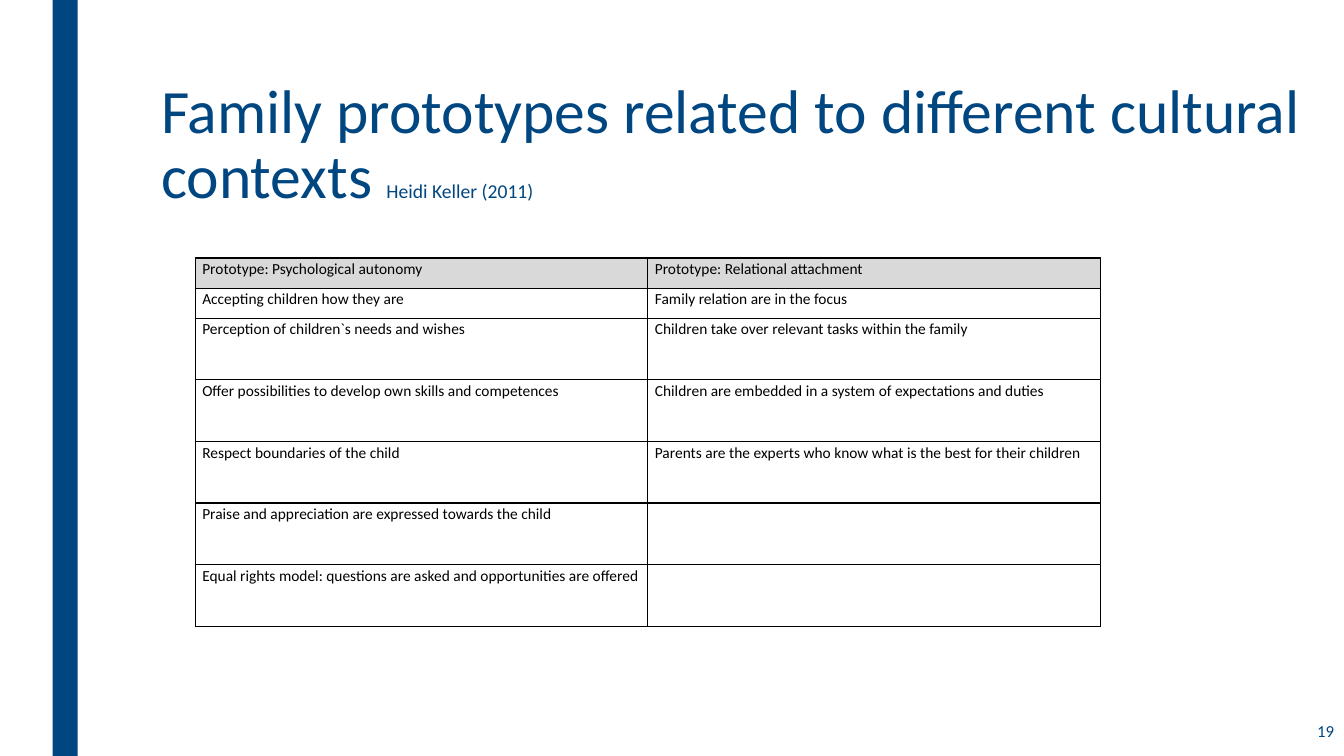
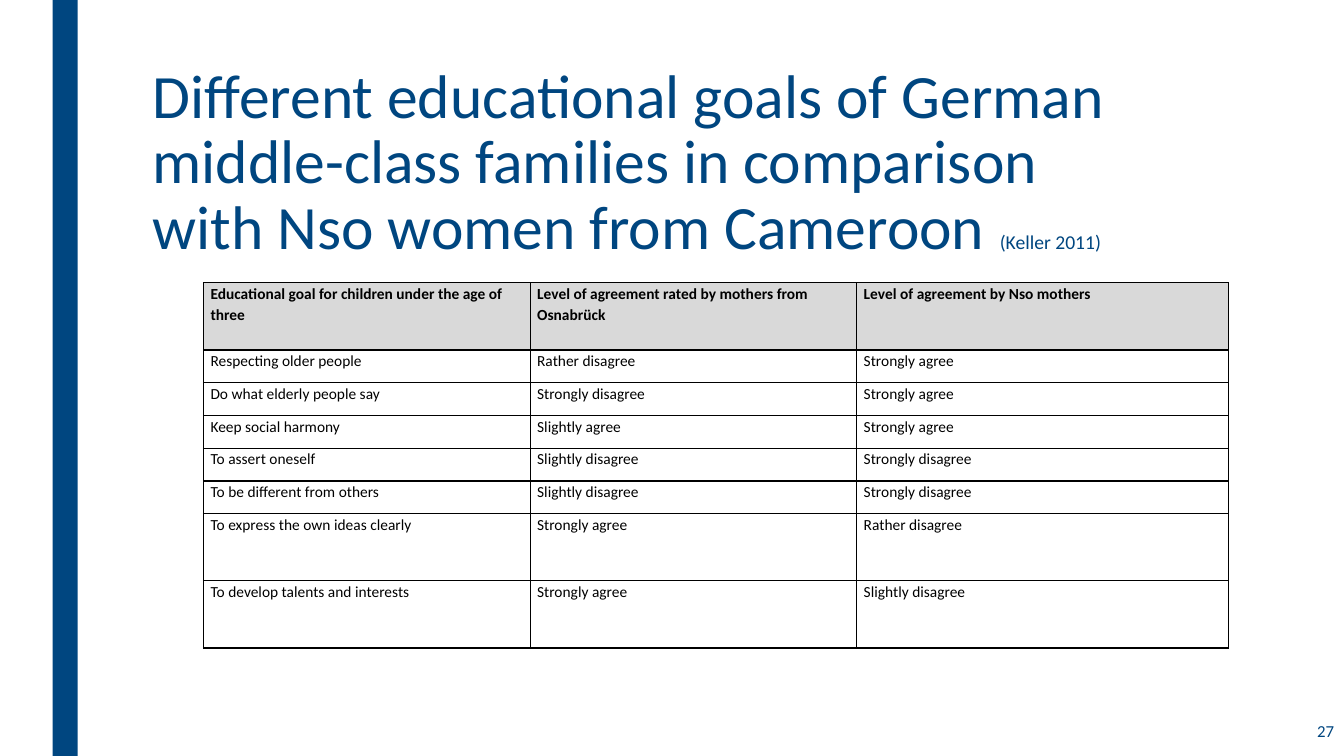
from lxml import etree
from pptx import Presentation
from pptx.dml.color import RGBColor
from pptx.enum.shapes import MSO_SHAPE
from pptx.enum.text import MSO_ANCHOR, PP_ALIGN
from pptx.oxml import parse_xml
from pptx.oxml.ns import nsdecls
from pptx.util import Pt

RECTANGLE = MSO_SHAPE.RECTANGLE
TOP, MIDDLE = MSO_ANCHOR.TOP, MSO_ANCHOR.MIDDLE
LEFT, RIGHT = PP_ALIGN.LEFT, PP_ALIGN.RIGHT


class Deck:
    """Holds the shared style and the current slide."""

    COLORS = {"blue": "004680", "black": "000000", "header": "D9D9D9"}
    FONT = "Calibri"

    def __init__(self):
        self.presentation = Presentation()
        self.presentation.slide_width = Pt(960)
        self.presentation.slide_height = Pt(540)
        self.slide = None

    def color(self, name):
        return RGBColor.from_string(self.COLORS[name])

    def new_slide(self, number):
        self.slide = self.presentation.slides.add_slide(self.presentation.slide_layouts[6])
        self.band()
        self.text(834, 506, 126, 32, [(str(number), 12)], anchor=MIDDLE, align=RIGHT)

    def band(self):
        band = self.slide.shapes.add_shape(RECTANGLE, Pt(37.5), 0, Pt(18), Pt(540))
        band.shadow.inherit = False
        band.fill.solid()
        band.fill.fore_color.rgb = self.color("blue")
        band.line.fill.background()

    def run(self, paragraph, words, size, color, bold=False):
        run = paragraph.add_run()
        run.text = words
        run.font.name = self.FONT
        run.font.size = Pt(size)
        run.font.bold = bold
        run.font.color.rgb = self.color(color)

    def text(self, left, top, width, height, runs, anchor=TOP, align=LEFT, spacing=1.0):
        frame = self.slide.shapes.add_textbox(Pt(left), Pt(top), Pt(width), Pt(height)).text_frame
        frame.word_wrap = True
        frame.vertical_anchor = anchor
        paragraph = frame.paragraphs[0]
        paragraph.alignment = align
        paragraph.line_spacing = spacing
        for words, size in runs:
            self.run(paragraph, words, size, "blue")

    def title(self, left, top, width, height, heading, citation):
        self.text(left, top, width, height, [(heading, 44), (citation, 14)], spacing=0.89)

    def borders(self, cell):
        properties = cell._tc.get_or_add_tcPr()
        for side in ("lnL", "lnR", "lnT", "lnB"):
            line = parse_xml(f'<a:{side} {nsdecls("a")} w="{Pt(1)}"/>')
            fill = etree.SubElement(line, line.tag.replace(side, "solidFill"))
            etree.SubElement(fill, line.tag.replace(side, "srgbClr"), val=self.COLORS["black"])
            properties.append(line)

    def cell(self, cell, words, header, bold):
        cell.margin_left = cell.margin_right = Pt(5)
        cell.margin_top = cell.margin_bottom = 0
        self.borders(cell)
        if header:
            cell.fill.solid()
            cell.fill.fore_color.rgb = self.color("header")
        else:
            cell.fill.background()
        if words:
            paragraph = cell.text_frame.paragraphs[0]
            paragraph.line_spacing = Pt(15)
            self.run(paragraph, words, 11, "black", bold)

    def table(self, left, top, widths, heights, rows, bold_header=False):
        table = self.slide.shapes.add_table(
            len(rows), len(widths), Pt(left), Pt(top), Pt(sum(widths)), Pt(sum(heights))
        ).table
        table.first_row = table.horz_banding = False
        for column, width in zip(table.columns, widths):
            column.width = Pt(width)
        for index, (row, height, texts) in enumerate(zip(table.rows, heights, rows)):
            row.height = Pt(height)
            header = index == 0
            for cell, words in zip(row.cells, texts):
                self.cell(cell, words, header, header and bold_header)


PROTOTYPES = [
    ("Prototype: Psychological autonomy", "Prototype: Relational attachment"),
    ("Accepting children how they are", "Family relation are in the focus"),
    ("Perception of children`s needs and wishes",
     "Children take over relevant tasks within the family"),
    ("Offer possibilities to develop own skills and competences",
     "Children are embedded in a system of expectations and duties"),
    ("Respect boundaries of the child",
     "Parents are the experts who know what is the best for their children"),
    ("Praise and appreciation are expressed towards the child", ""),
    ("Equal rights model: questions are asked and opportunities are offered", ""),
]

GOALS = [
    ("Educational goal for children under the age of three",
     "Level of agreement rated by mothers from Osnabrück",
     "Level of agreement by Nso mothers"),
    ("Respecting older people", "Rather disagree", "Strongly agree"),
    ("Do what elderly people say", "Strongly disagree", "Strongly agree"),
    ("Keep social harmony", "Slightly agree", "Strongly agree"),
    ("To assert oneself", "Slightly disagree", "Strongly disagree"),
    ("To be different from others", "Slightly disagree", "Strongly disagree"),
    ("To express the own ideas clearly", "Strongly agree", "Rather disagree"),
    ("To develop talents and interests", "Strongly agree", "Slightly disagree"),
]


def main():
    deck = Deck()

    deck.new_slide(19)
    deck.title(108, 54, 831, 117,
               "Family prototypes related to different cultural contexts ", "Heidi Keller (2011)")
    deck.table(139.5, 184.3, [323.3] * 2, [21.5] * 2 + [44] * 5, PROTOTYPES)

    deck.new_slide(27)
    deck.title(102, 43.2, 730, 166,
               "Different educational goals of German middle-class families "
               "in comparison with Nso women from Cameroon ", "(Keller 2011)")
    deck.table(145.4, 202, [233.3, 233.3, 265.7], [48] + [23.4] * 5 + [48] * 2, GOALS,
               bold_header=True)

    deck.presentation.save("out.pptx")


if __name__ == "__main__":
    main()
